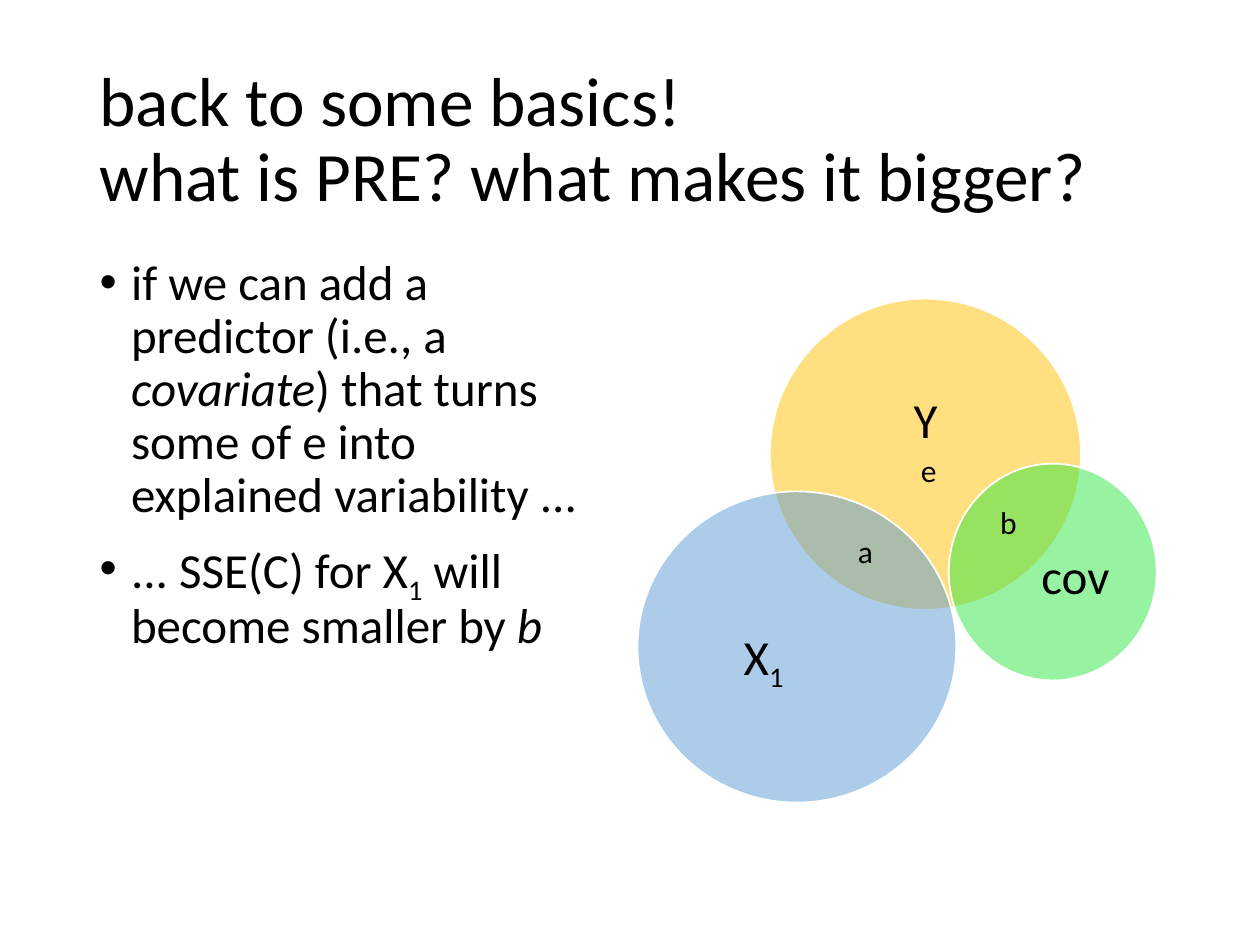
from dataclasses import dataclass

from lxml import etree
from pptx import Presentation
from pptx.dml.color import RGBColor
from pptx.enum import shapes, text
from pptx.oxml.ns import qn
from pptx.util import Inches, Pt

BLACK = RGBColor(0x00, 0x00, 0x00)
WHITE = RGBColor(0xFF, 0xFF, 0xFF)
YELLOW = RGBColor(0xFF, 0xC0, 0x00)
GREEN = RGBColor(0x30, 0xE8, 0x45)
BLUE = RGBColor(0x5B, 0x9B, 0xD5)
FONT = "Calibri"
Box = tuple[float, float, float, float]


@dataclass
class Span:
    words: str
    italic: bool = False
    subscript: bool = False


@dataclass
class Circle:
    box: Box
    color: RGBColor
    label_box: Box
    label: list[Span]


@dataclass
class Region:
    name: str
    box: Box


CIRCLES = [
    Circle((6.11, 2.37, 2.47, 2.47), YELLOW, (6.44, 2.8, 1.81, 1.11), [Span("Y")]),
    Circle((7.53, 3.68, 1.65, 1.72), GREEN, (8.04, 4.12, 0.99, 0.95), [Span("cov")]),
    Circle((5.06, 3.9, 2.53, 2.47), BLUE, (5.3, 4.54, 1.52, 1.36),
           [Span("X"), Span("1", subscript=True)]),
]
REGIONS = [
    Region("a", (6.71, 4.17, 0.32, 0.4)),
    Region("e", (7.21, 3.53, 0.33, 0.4)),
    Region("b", (7.84, 3.94, 0.34, 0.4)),
]
POINTS = [
    [Span("if we can add a predictor (i.e., a "), Span("covariate", italic=True),
     Span(") that turns some of e into explained variability ...")],
    [Span("... SSE(C) for X"), Span("1", subscript=True),
     Span(" will become smaller by "), Span("b", italic=True)],
]


def inches(box: Box) -> list[int]:
    return [Inches(length) for length in box]


def place(shape, box: Box) -> None:
    shape.left, shape.top, shape.width, shape.height = inches(box)


def style(paragraph, size: float, align=text.PP_ALIGN.LEFT, spacing: float = 0.9) -> None:
    paragraph.font.name = FONT
    paragraph.font.size = Pt(size)
    paragraph.font.color.rgb = BLACK
    paragraph.alignment = align
    paragraph.line_spacing = spacing


def write(paragraph, spans: list[Span]) -> None:
    for span in spans:
        run = paragraph.add_run()
        run.text = span.words
        if span.italic:
            run.font.italic = True
        if span.subscript:
            run.font._element.set("baseline", "-25000")


def draw_circle(slide, circle: Circle) -> None:
    """Draw a half-transparent circle with its label above it."""
    disc = slide.shapes.add_shape(shapes.MSO_SHAPE.OVAL, *inches(circle.box))
    disc.shadow.inherit = False
    disc.fill.solid()
    disc.fill.fore_color.rgb = circle.color
    color = disc._element.spPr.find(qn("a:solidFill"))[0]
    etree.SubElement(color, qn("a:alpha"), val="50000")
    disc.line.color.rgb = WHITE
    disc.line.width = Pt(1)

    frame = slide.shapes.add_textbox(*inches(circle.label_box)).text_frame
    frame.word_wrap = True
    frame.vertical_anchor = text.MSO_ANCHOR.MIDDLE
    frame.margin_left = frame.margin_right = frame.margin_top = frame.margin_bottom = 0
    style(frame.paragraphs[0], 28, text.PP_ALIGN.CENTER)
    write(frame.paragraphs[0], circle.label)


def draw_region(slide, region: Region) -> None:
    frame = slide.shapes.add_textbox(*inches(region.box)).text_frame
    frame.word_wrap = False
    frame.auto_size = text.MSO_AUTO_SIZE.SHAPE_TO_FIT_TEXT
    style(frame.paragraphs[0], 18, spacing=1.0)
    write(frame.paragraphs[0], [Span(region.name)])


def fill_title(title) -> None:
    place(title, (0.69, 0.4, 8.62, 1.45))
    frame = title.text_frame
    frame.auto_size = text.MSO_AUTO_SIZE.NONE
    frame.vertical_anchor = text.MSO_ANCHOR.MIDDLE
    heading = frame.paragraphs[0]
    heading.text = "back to some basics!\vwhat is PRE? what makes it bigger?"
    style(heading, 39.6)


def fill_body(body) -> None:
    place(body, (0.69, 2, 4.25, 4.76))
    frame = body.text_frame
    frame.auto_size = text.MSO_AUTO_SIZE.NONE
    for index, spans in enumerate(POINTS):
        point = frame.add_paragraph() if index else frame.paragraphs[0]
        style(point, 28)
        point.space_before = Pt(10)
        properties = point._p.get_or_add_pPr()
        properties.set("marL", str(Inches(0.25)))
        properties.set("indent", str(Inches(-0.25)))
        write(point, spans)


def main() -> None:
    deck = Presentation()
    deck.slide_width, deck.slide_height = Inches(10), Inches(7.5)
    slide = deck.slides.add_slide(deck.slide_layouts[1])
    fill_title(slide.shapes.title)
    fill_body(slide.placeholders[1])
    for circle in CIRCLES:
        draw_circle(slide, circle)
    for region in REGIONS:
        draw_region(slide, region)
    deck.save("out.pptx")


if __name__ == "__main__":
    main()
